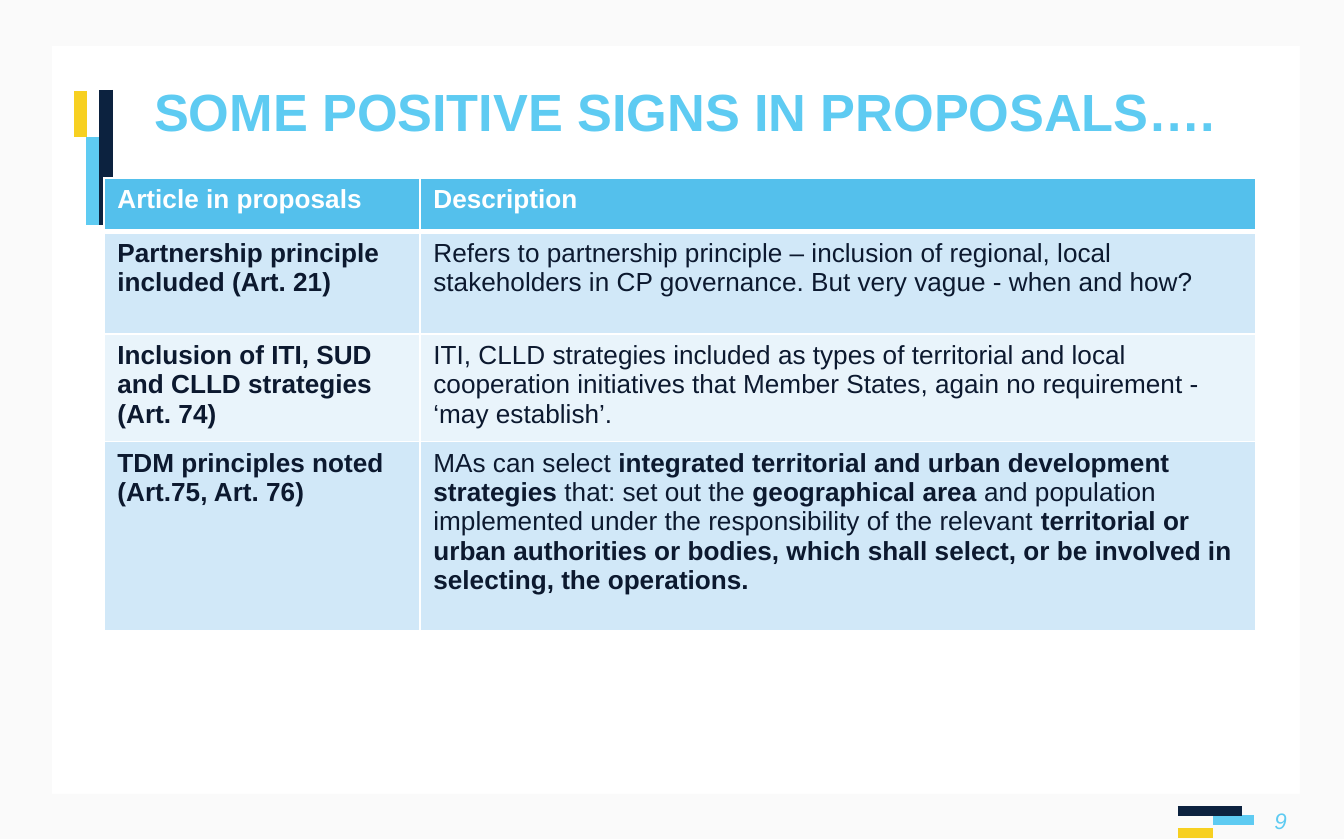
from lxml.etree import SubElement
from pptx import Presentation
from pptx.dml.color import RGBColor
from pptx.enum.shapes import MSO_CONNECTOR, MSO_SHAPE
from pptx.enum.text import MSO_ANCHOR, PP_ALIGN
from pptx.oxml.ns import qn
from pptx.util import Pt

EMU_PER_PX = 914400 / 134.4
WIDTH, HEIGHT = 1344, 840
WHITE, FRAME, SKY, NAVY, YELLOW = "FFFFFF", "FAFAFA", "5ECBF2", "0C223F", "F7D021"
HEADER, INK, BAND_DARK, BAND_LIGHT = "54C0EC", "0C192F", "D1E8F8", "E9F4FB"


def px(length):
    return round(length * EMU_PER_PX)


def color(value):
    return RGBColor.from_string(value)


class SlideBuilder:
    def __init__(self, page, font="Arial"):
        self.page = page
        self.font = font

    def add_spans(self, para, spans, ink, **formats):
        """Add (text, bold) spans to a paragraph."""
        for text, bold in spans:
            span = para.add_run()
            span.text = text
            for name, value in {"name": self.font, "bold": bold, **formats}.items():
                setattr(span.font, name, value)
            span.font.color.rgb = color(ink)

    def rectangle(self, left, top, width, height, fill):
        shape = self.page.shapes.add_shape(
            MSO_SHAPE.RECTANGLE, px(left), px(top), px(width), px(height))
        shape.shadow.inherit = False
        shape.fill.solid()
        shape.fill.fore_color.rgb = color(fill)
        shape.line.fill.background()

    def line(self, start, end, ink, weight):
        connector = self.page.shapes.add_connector(
            MSO_CONNECTOR.STRAIGHT, *map(px, start + end))
        connector.line.color.rgb = color(ink)
        connector.line.width = Pt(weight)
        SubElement(connector._element.spPr, qn("a:effectLst"))

    def text(self, left, top, width, height, spans, ink, align=PP_ALIGN.LEFT, **formats):
        box = self.page.shapes.add_textbox(px(left), px(top), px(width), px(height))
        box.text_frame.word_wrap = True
        box.text_frame.vertical_anchor = MSO_ANCHOR.MIDDLE
        para = box.text_frame.paragraphs[0]
        para.alignment = align
        self.add_spans(para, spans, ink, **formats)

    def borders(self, cell, weights):
        """Put white borders on a cell, given points by side."""
        properties = cell._tc.get_or_add_tcPr()
        for index, (side, weight) in enumerate(weights.items()):
            border = properties.makeelement(qn(f"a:ln{side}"), {"w": str(Pt(weight))})
            fill = SubElement(border, qn("a:solidFill"))
            SubElement(fill, qn("a:srgbClr"), val=WHITE)
            properties.insert(index, border)

    def table(self, left, top, widths, heights, rows):
        table = self.page.shapes.add_table(
            len(rows), len(widths), px(left), px(top),
            px(sum(widths)), px(sum(heights))).table
        for column, width in zip(table.columns, widths):
            column.width = px(width)
        for index, (row, height) in enumerate(zip(table.rows, heights)):
            row.height = px(height)
            fill = (BAND_DARK if index % 2 else BAND_LIGHT) if index else HEADER
            for cell, spans in zip(row.cells, rows[index]):
                cell.fill.solid()
                cell.fill.fore_color.rgb = color(fill)
                self.borders(cell, {"L": 1, "R": 1, "T": 3 if index == 1 else 1,
                                    "B": 1 if index else 3})
                self.add_spans(cell.text_frame.paragraphs[0], spans,
                               INK if index else WHITE, size=Pt(14))


ROWS = [
    ([("Article in proposals", True)], [("Description", True)]),
    ([("Partnership principle included (Art. 21)", True)],
     [("Refers to partnership principle – inclusion of regional, local stakeholders "
       "in CP governance. But very vague - when and how?", False)]),
    ([("Inclusion of ITI, SUD and CLLD strategies (Art. 74)", True)],
     [("ITI, CLLD strategies included as types of territorial and local cooperation "
       "initiatives that Member States, again no requirement - ‘may establish’.", False)]),
    ([("TDM principles noted (Art.75, Art. 76)", True)],
     [("MAs can select ", False),
      ("integrated territorial and urban development strategies", True),
      (" that: set out the ", False),
      ("geographical area ", True),
      ("and population implemented under the responsibility of the relevant ", False),
      ("territorial or urban authorities or bodies, which shall select, or be involved "
       "in selecting, the operations.", True)]),
]


def main():
    deck = Presentation()
    deck.slide_width, deck.slide_height = px(WIDTH), px(HEIGHT)
    builder = SlideBuilder(deck.slides.add_slide(deck.slide_layouts[6]))

    for area in [(0, 794, WIDTH, 45), (1300, 0, 44, 794),
                 (0, 0, WIDTH, 46), (0, 0, 52, 839)]:
        builder.rectangle(*area, FRAME)

    for x, top, bottom, ink in [(81, 91, 137, YELLOW), (93, 137, 225, SKY),
                                (106, 90, 225, NAVY)]:
        builder.line((x, top), (x, bottom), ink, 7)
    for y, left, right, ink in [(833, 1178, 1213, YELLOW), (820, 1213, 1254, SKY),
                                (811, 1178, 1242, NAVY)]:
        builder.line((left, y), (right, y), ink, 5)

    builder.text(141, 71, 1092, 80, [("SOME POSITIVE SIGNS IN PROPOSALS….", True)],
                 SKY, size=Pt(28))
    builder.text(1213, 802, 87, 38, [("9", False)], SKY, PP_ALIGN.RIGHT,
                 size=Pt(12), italic=True)
    builder.table(104, 178, [316, 836], [54, 102, 102, 189], ROWS)
    deck.save("out.pptx")


if __name__ == "__main__":
    main()
